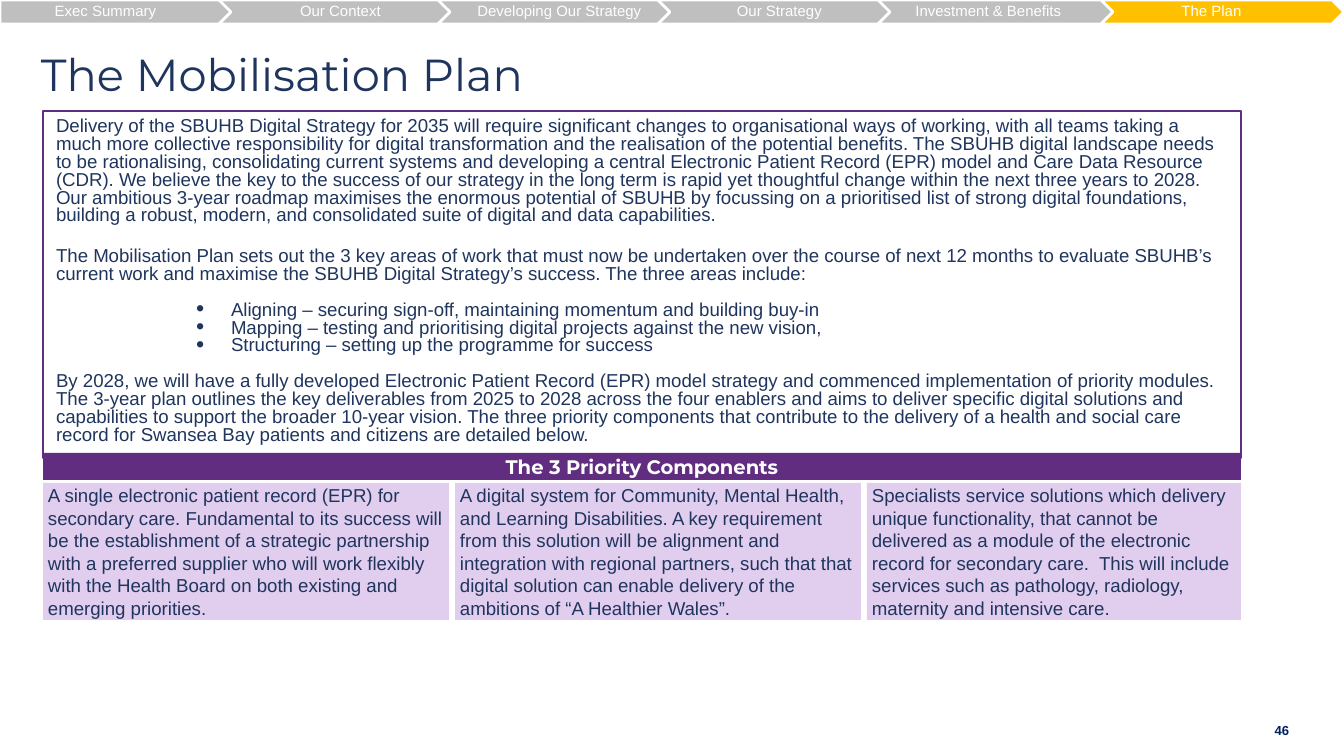
from lxml import etree
from pptx import Presentation
from pptx import util as u
from pptx.dml.color import RGBColor
from pptx.enum import shapes, text
from pptx.oxml.ns import qn

PX = 914400 / 134.4
COLOURS = {
    "navy": "1F355E",
    "page": "002060",
    "purple": "602D80",
    "lilac": "E1CDED",
    "grey": "BFBFBF",
    "gold": "FFC000",
    "white": "FFFFFF",
}
KINDS = shapes.MSO_SHAPE
CENTRE = text.PP_ALIGN.CENTER
LEFT = text.PP_ALIGN.LEFT


def px(value):
    return u.Emu(round(value * PX))


def add_block(box, wording, size, colour, kind=None, fill=None, line=None, line_pt=0.75,
              insets=(13, 7, 13, 7), align=LEFT, font="Arial", bold=False,
              anchor=text.MSO_ANCHOR.MIDDLE):
    place = [px(v) for v in box]
    if kind is None:
        block = slide.shapes.add_textbox(*place)
    else:
        block = slide.shapes.add_shape(kind, *place)
        block.shadow.inherit = False
        if fill:
            block.fill.solid()
            block.fill.fore_color.rgb = RGBColor.from_string(COLOURS[fill])
        else:
            block.fill.background()
        if line:
            block.line.color.rgb = RGBColor.from_string(COLOURS[line])
            block.line.width = u.Pt(line_pt)
        else:
            block.line.fill.background()
    frame = block.text_frame
    frame.word_wrap = True
    frame.vertical_anchor = anchor
    frame.margin_left, frame.margin_top, frame.margin_right, frame.margin_bottom = map(px, insets)
    frame.text = wording
    for paragraph in frame.paragraphs:
        paragraph.alignment = align
        for run in paragraph.runs:
            run.font.size = u.Pt(size)
            run.font.name = font
            run.font.bold = bold
            run.font.color.rgb = RGBColor.from_string(COLOURS[colour])
    return frame


deck = Presentation()
deck.slide_width, deck.slide_height = px(1344), px(756)
slide = deck.slides.add_slide(deck.slide_layouts[6])

add_block((28, 0, 1159, 147), "The Mobilisation Plan", 24, "navy", font="Montserrat")

areas = [
    "Aligning – securing sign-off, maintaining momentum and building buy-in",
    "Mapping – testing and prioritising digital projects against the new vision,",
    "Structuring – setting up the programme for success",
]
overview = [
    "Delivery of the SBUHB Digital Strategy for 2035 will require significant changes to "
    "organisational ways of working, with all teams taking a much more collective responsibility "
    "for digital transformation and the realisation of the potential benefits. The SBUHB digital "
    "landscape needs to be rationalising, consolidating current systems and developing a central "
    "Electronic Patient Record (EPR) model and Care Data Resource (CDR). We believe the key to the "
    "success of our strategy in the long term is rapid yet thoughtful change within the next three "
    "years to 2028. Our ambitious 3-year roadmap maximises the enormous potential of SBUHB by "
    "focussing on a prioritised list of strong digital foundations, building a robust, modern, and "
    "consolidated suite of digital and data capabilities.",
    "The Mobilisation Plan sets out the 3 key areas of work that must now be undertaken over the "
    "course of next 12 months to evaluate SBUHB’s current work and maximise the SBUHB Digital "
    "Strategy’s success. The three areas include:",
    *areas,
    "By 2028, we will have a fully developed Electronic Patient Record (EPR) model strategy and "
    "commenced implementation of priority modules. The 3-year plan outlines the key deliverables "
    "from 2025 to 2028 across the four enablers and aims to deliver specific digital solutions and "
    "capabilities to support the broader 10-year vision. The three priority components that "
    "contribute to the delivery of a health and social care record for Swansea Bay patients and "
    "citizens are detailed below.",
]
gaps = [0, 12, 9.6, 0, 0, 9.6]
plan = add_block((43, 111, 1198, 347), "\n".join(overview), 10, "navy", KINDS.RECTANGLE,
                 line="purple", anchor=text.MSO_ANCHOR.TOP)
for paragraph, gap in zip(plan.paragraphs, gaps):
    paragraph.line_spacing = 0.8
    paragraph.space_before = u.Pt(gap)
    if paragraph.text in areas:
        layout = paragraph._p.get_or_add_pPr()
        layout.set("marL", str(px(175)))
        layout.set("indent", str(px(-35)))
        etree.SubElement(layout, qn("a:buSzPct"), val="125000")
        etree.SubElement(layout, qn("a:buFont"), typeface="Arial")
        etree.SubElement(layout, qn("a:buChar"), char="•")

add_block((43, 453, 1198, 27), "The 3 Priority Components", 10.5, "white", KINDS.RECTANGLE,
          fill="purple", insets=(9, 9, 9, 9), align=CENTRE, font="Montserrat", bold=True)

components = [
    (406, "A single electronic patient record (EPR) for secondary care. Fundamental to its success "
          "will be the establishment of a strategic partnership with a preferred supplier who will "
          "work flexibly with the Health Board on both existing and emerging priorities."),
    (406, "A digital system for Community, Mental Health, and Learning Disabilities. A key "
          "requirement from this solution will be alignment and integration with regional "
          "partners, such that that digital solution can enable delivery of the ambitions of "
          "“A Healthier Wales”."),
    (374, "Specialists service solutions which delivery unique functionality, that cannot be "
          "delivered as a module of the electronic record for secondary care.  This will include "
          "services such as pathology, radiology, maternity and intensive care."),
]
left = 43
for width, wording in components:
    add_block((left, 483, width, 137), wording, 10, "navy", KINDS.RECTANGLE,
              fill="lilac", insets=(5, 5, 5, 5))
    left += width + 6

sections = [
    ("Exec Summary", 0, 239),
    ("Our Context", 219, 265),
    ("Developing Our Strategy", 438, 265),
    ("Our Strategy", 658, 265),
    ("Investment & Benefits", 878, 243),
    ("The Plan", 1101, 243),
]
for section, left, width in sections:
    step = add_block((left, 0, width, 24), section, 8, "white",
                     KINDS.CHEVRON if left else KINDS.PENTAGON,
                     fill="gold" if section == "The Plan" else "grey",
                     line="white", line_pt=1.5, insets=(5, 3, 27, 3), align=CENTRE)
    step.paragraphs[0].line_spacing = 0.9

add_block((1254, 715, 56, 31), "46", 7, "page", insets=(8, 8, 8, 8), align=CENTRE, bold=True)

deck.save("out.pptx")
